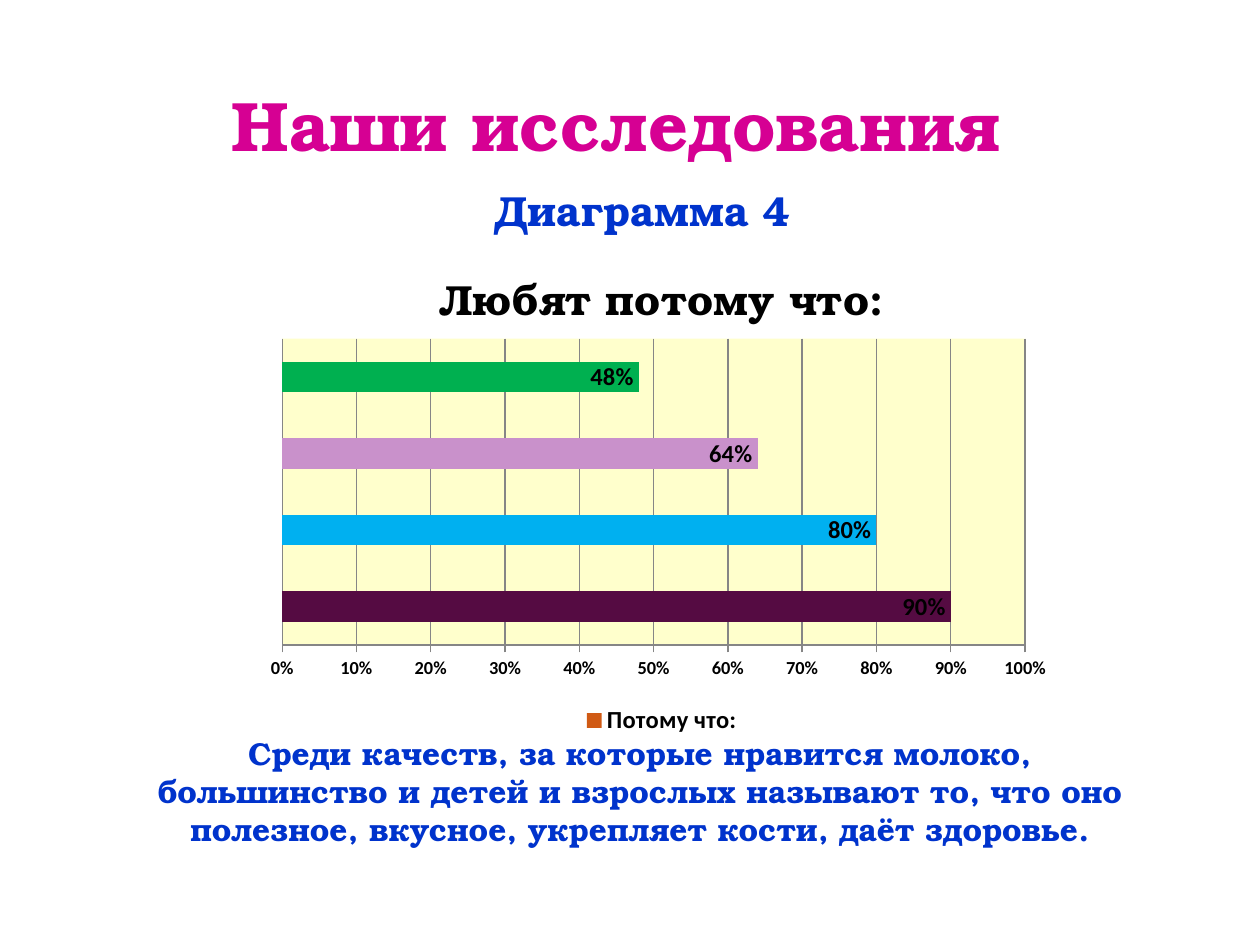
from dataclasses import dataclass

from lxml.etree import SubElement
from pptx import Presentation
from pptx.chart.data import CategoryChartData
from pptx.dml.color import RGBColor as Rgb
from pptx.enum.chart import XL_CHART_TYPE as ChartType
from pptx.enum.chart import XL_LABEL_POSITION as LabelPosition
from pptx.enum.chart import XL_LEGEND_POSITION as LegendPosition
from pptx.enum.chart import XL_TICK_MARK as TickMark
from pptx.enum.text import MSO_ANCHOR as Anchor
from pptx.enum.text import MSO_AUTO_SIZE as AutoSize
from pptx.enum.text import PP_ALIGN as Align
from pptx.oxml import parse_xml
from pptx.oxml.ns import nsdecls, qn
from pptx.util import Cm, Pt


@dataclass(frozen=True)
class Theme:
    heading_font: str = "TeX Gyre Bonum"
    chart_font: str = "Calibri"
    title: str = "D60093"
    accent: str = "0033CC"
    ink: str = "000000"
    grid: str = "868686"
    plot: str = "FFFFCC"
    series: str = "D05A14"
    bars: tuple = ("550B42", "00B0F0", "C991CB", "00B050")
    title_size: float = 40
    subtitle_size: float = 24
    body_size: float = 18
    label_size: float = 14
    axis_size: float = 10.5


THEME = Theme()


def set_font(font, name, size, color):
    font.name = name
    font.size = Pt(size)
    font.bold = True
    font.color.rgb = Rgb.from_string(color)


def fill_solid(fill, color):
    fill.solid()
    fill.fore_color.rgb = Rgb.from_string(color)


def write_text(shape, text, size, color, wrap=True):
    """Put one centred heading-font paragraph at the top of the shape."""
    frame = shape.text_frame
    frame.auto_size = AutoSize.NONE
    frame.word_wrap = wrap
    frame.vertical_anchor = Anchor.TOP
    para = frame.paragraphs[0]
    para.alignment = Align.CENTER
    para.line_spacing = 1.0
    span = para.add_run()
    span.text = text
    set_font(span.font, THEME.heading_font, size, color)


def add_title(page, left, top, width, height):
    title = page.shapes.title
    title.left, title.top, title.width, title.height = left, top, width, height
    write_text(title, "Наши исследования", THEME.title_size, THEME.title, wrap=False)


def add_caption(page, text, size, left, top, width, height):
    box = page.shapes.add_textbox(left, top, width, height)
    write_text(box, text, size, THEME.accent)


def set_plot_area(chart, **fractions):
    """Fix the inner plot area as fractions of the chart and colour it."""
    area = chart.element.find(".//" + qn("c:plotArea"))
    for old in area.findall(qn("c:layout")):
        area.remove(old)
    layout = parse_xml(f"<c:layout {nsdecls('c')}><c:manualLayout/></c:layout>")
    settings = {"layoutTarget": "inner", "xMode": "edge", "yMode": "edge", **fractions}
    for name, value in settings.items():
        SubElement(layout[0], qn(f"c:{name}")).set("val", str(value))
    area.insert(0, layout)
    area.append(parse_xml(
        f"<c:spPr {nsdecls('c', 'a')}><a:solidFill>"
        f'<a:srgbClr val="{THEME.plot}"/></a:solidFill></c:spPr>'))


def style_axes(chart):
    chart.category_axis.visible = False
    axis = chart.value_axis
    axis.minimum_scale, axis.maximum_scale, axis.major_unit = 0, 1, 0.1
    axis.major_tick_mark = TickMark.CROSS
    axis.tick_labels.number_format = "0%"
    axis.tick_labels.number_format_is_linked = False
    set_font(axis.tick_labels.font, THEME.chart_font, THEME.axis_size, THEME.ink)
    axis.has_major_gridlines = True
    for line in (axis.format.line, axis.major_gridlines.format.line):
        line.width = Pt(0.75)
        line.color.rgb = Rgb.from_string(THEME.grid)


def style_bars(plot):
    plot.vary_by_categories = False
    plot.gap_width = 150
    series = plot.series[0]
    fill_solid(series.format.fill, THEME.series)
    for index, color in enumerate(THEME.bars):
        fill_solid(series.points[index].format.fill, color)
    labels = series.data_labels
    labels.show_value = True
    labels.position = LabelPosition.INSIDE_END
    labels.number_format = "0%"
    labels.number_format_is_linked = False
    set_font(labels.font, THEME.chart_font, THEME.label_size, THEME.ink)


def add_reasons_chart(page, left, top, width, height):
    data = CategoryChartData(number_format="0%")
    data.categories = ["1", "2", "3", "4"]
    data.add_series("Потому что:", (0.9, 0.8, 0.64, 0.48))
    chart = page.shapes.add_chart(
        ChartType.BAR_CLUSTERED, left, top, width, height, data).chart
    chart.font.name = THEME.chart_font
    chart.font.size = Pt(10)

    chart.has_title = True
    span = chart.chart_title.text_frame.paragraphs[0].add_run()
    span.text = "Любят потому что:"
    set_font(span.font, THEME.heading_font, THEME.subtitle_size, THEME.ink)
    chart.chart_title.include_in_layout = False

    chart.has_legend = True
    chart.legend.position = LegendPosition.BOTTOM
    chart.legend.include_in_layout = False
    set_font(chart.legend.font, THEME.chart_font, THEME.label_size, THEME.ink)

    style_axes(chart)
    style_bars(chart.plots[0])
    set_plot_area(chart, x=0.03, y=0.2, w=0.92, h=0.61)


def main():
    deck = Presentation()
    deck.slide_width, deck.slide_height = Cm(25.4), Cm(19.05)
    page = deck.slides.add_slide(deck.slide_layouts[5])
    add_title(page, Cm(4.3), Cm(1.52), Cm(16.23), Cm(1.96))
    add_caption(page, "Диаграмма 4", THEME.subtitle_size,
                Cm(9.35), Cm(3.6), Cm(7.2), Cm(1.3))
    add_reasons_chart(page, Cm(5.2), Cm(4.8), Cm(16.28), Cm(10.13))
    add_caption(page, "Среди качеств, за которые нравится молоко, большинство и детей "
                "и взрослых называют то, что оно полезное, вкусное, укрепляет кости, "
                "даёт здоровье.", THEME.body_size,
                Cm(2.4), Cm(14.68), Cm(21), Cm(2.57))
    deck.save("out.pptx")


if __name__ == "__main__":
    main()
